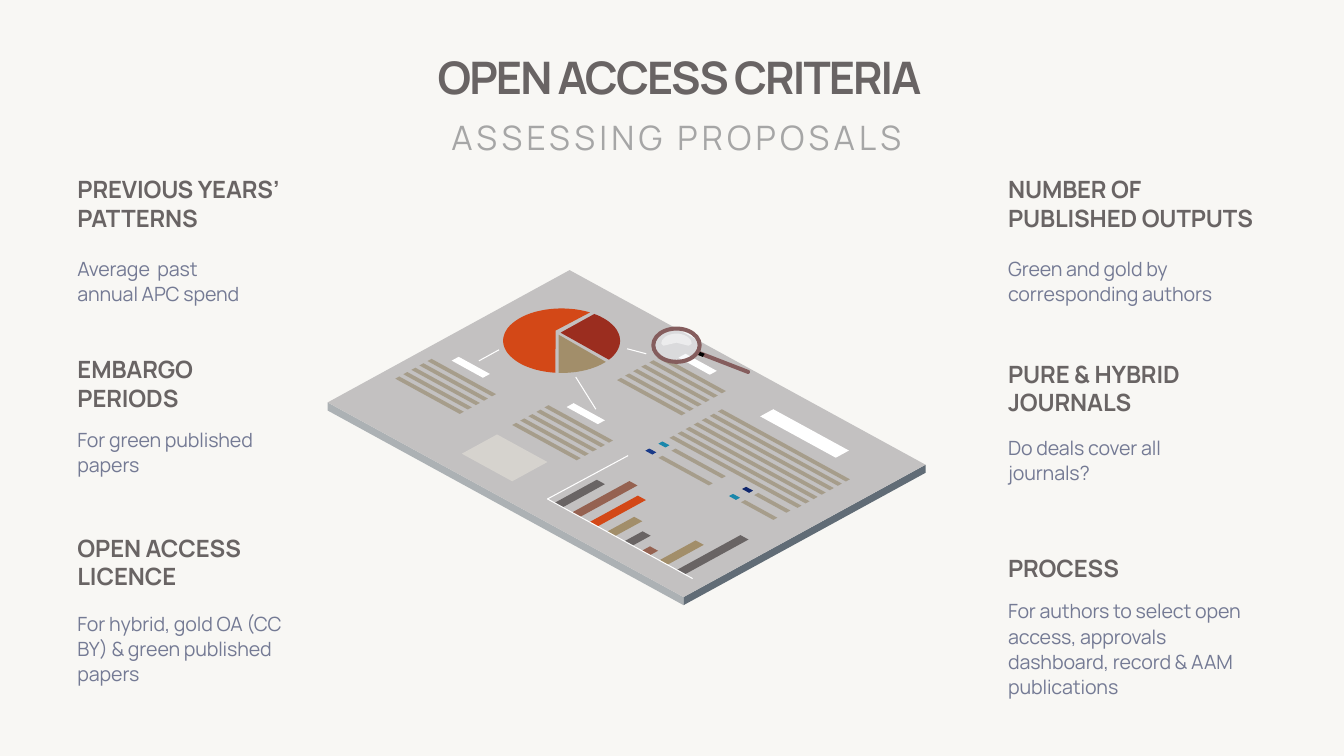
from math import cos, radians, sin

from lxml.etree import SubElement
from pptx import Presentation
from pptx.dml.color import RGBColor
from pptx.enum.shapes import MSO_CONNECTOR, MSO_SHAPE
from pptx.enum.text import MSO_ANCHOR, MSO_AUTO_SIZE, PP_ALIGN
from pptx.oxml.ns import qn
from pptx.util import Inches, Pt

BACKGROUND = RGBColor(0xF8, 0xF7, 0xF4)
CHARCOAL = RGBColor(0x69, 0x64, 0x64)
SILVER = RGBColor(0xA6, 0xA6, 0xA6)
LAVENDER = RGBColor(0x74, 0x7A, 0x94)
PAGE_GREY = RGBColor(0xC3, 0xC1, 0xC1)
SLATE = RGBColor(0x61, 0x6C, 0x76)
BEIGE = RGBColor(0xE9, 0xE5, 0xDC)
OLIVE = RGBColor(0x8B, 0x7B, 0x57)
BROWN = RGBColor(0x95, 0x62, 0x51)
ORANGE = RGBColor(0xD3, 0x48, 0x17)
TAN = RGBColor(0xA2, 0x8E, 0x6A)
RED = RGBColor(0x9B, 0x2D, 0x1F)
NAVY = RGBColor(0x19, 0x3A, 0x89)
DARK_NAVY = RGBColor(0x0F, 0x26, 0x6D)
TEAL = RGBColor(0x1A, 0x87, 0xAB)
MAUVE = RGBColor(0x85, 0x5D, 0x5D)
ICE = RGBColor(0xF2, 0xF4, 0xF8)
WHITE = RGBColor(0xFF, 0xFF, 0xFF)
BLACK = RGBColor(0, 0, 0)

TITLE_STYLE = {"size": Pt(32), "bold": True, "color": CHARCOAL, "spacing": -1.4}
SUBTITLE_STYLE = {"size": Pt(24), "bold": False, "color": SILVER, "spacing": 3}
HEADING_STYLE = {"size": Pt(17), "bold": True, "color": CHARCOAL, "spacing": -0.1}
BODY_STYLE = {"size": Pt(14), "bold": False, "color": LAVENDER, "spacing": -0.1}

# Column left, then: heading, (top, width, height), body, (top, width, height)
CRITERIA = {
    0.67: [
        ("PREVIOUS YEARS’ PATTERNS", (1.68, 2.38, 0.67),
         "Average  past annual APC spend", (2.48, 2, 0.6)),
        ("EMBARGO PERIODS", (3.47, 2.12, 0.67),
         "For green published papers", (4.18, 2, 0.6)),
        ("OPEN ACCESS LICENCE", (5.24, 2, 0.67),
         "For hybrid, gold OA (CC BY) & green published papers", (6, 2.38, 0.85)),
    ],
    9.9: [
        ("NUMBER OF PUBLISHED OUTPUTS", (1.68, 2.77, 0.67),
         "Green and gold by corresponding authors", (2.48, 2.45, 0.6)),
        ("PURE & HYBRID JOURNALS", (3.51, 2.12, 0.67),
         "Do deals cover all journals?", (4.26, 2, 0.6)),
        ("PROCESS", (5.44, 2, 0.39),
         "For authors to select open access, approvals dashboard, record & AAM publications",
         (5.88, 2.61, 1.1)),
    ],
}

# The page is seen at an angle: "along" runs down right, "across" down left.
SLOPE = 0.547
PAGE_TOP, PAGE_ALONG, PAGE_ACROSS, PAGE_DEPTH = (5.65, 2.68), 3.53, 2.4, 0.08

# Top corner, along, across
CAPTIONS = [((7.67, 4.06), 0.75, 0.13), ((5.69, 4), 0.31, 0.07),
            ((4.55, 3.54), 0.31, 0.07), ((6.8, 3.51), 0.31, 0.07)]
# Top corner of the first line, line length, number of lines, step
TEXT_BLOCKS = [((6.56, 3.53), 0.64, 6, 0.08), ((4.28, 3.56), 0.64, 5, 0.08),
               ((5.44, 4.02), 0.64, 5, 0.08), ((7.16, 4.06), 1.27, 7, 0.08),
               ((6.7, 4.45), 0.5, 2, 0.13), ((7.52, 4.89), 0.32, 2, 0.13)]
LEGEND_KEYS = [((6.44, 4.45), NAVY), ((7.27, 4.9), TEAL),
               ((6.57, 4.38), TEAL), ((7.4, 4.83), DARK_NAVY)]
BARS = [(0.42, CHARCOAL), (0.57, BROWN), (0.48, ORANGE), (0.27, TAN),
        (0.18, CHARCOAL), (0.08, BROWN), (0.36, TAN), (0.63, CHARCOAL)]
BAR_START, BAR_STEP, BAR_THICKNESS = (5.5, 4.99), 0.17, 0.08
# Tip, first and last angle, colour
PIE_SLICES = [((5.51, 3.28), 96, 299, ORANGE), ((5.56, 3.3), -56, 36, RED),
              ((5.54, 3.32), 41, 93, TAN)]
WHITE_LINES = [((6.23, 4.52), (5.43, 4.95)), ((5.43, 4.95), (6.87, 5.74)),
               ((5.71, 3.74), (5.91, 4.06)), ((4.95, 3.47), (4.75, 3.58)),
               ((6.22, 3.46), (6.41, 3.51))]


def shifted(point, along=0, across=0):
    """Move a point over the tilted page."""
    return point[0] + along - across, point[1] + (along + across) * SLOPE


def tile(top, along, across):
    """Corners of a rectangle lying on the tilted page."""
    return [top, shifted(top, along), shifted(top, along, across), shifted(top, 0, across)]


def arc(center, radius_x, radius_y, first, last, parts=40):
    angles = [radians(first + (last - first) * i / parts) for i in range(parts + 1)]
    return [(center[0] + radius_x * cos(a), center[1] + radius_y * sin(a)) for a in angles]


def paint(shape, color, opacity=100):
    shape.shadow.inherit = False
    shape.fill.solid()
    shape.fill.fore_color.rgb = color
    if opacity < 100:
        color_element = next(shape._element.spPr.iter(qn("a:srgbClr")))
        SubElement(color_element, qn("a:alpha")).set("val", str(opacity * 1000))


def add_outlines(shapes, outlines, color, opacity=100):
    """Draw closed outlines as one shape; points are in inches."""
    scaled = [[(x * 1000, y * 1000) for x, y in outline] for outline in outlines]
    builder = shapes.build_freeform(*scaled[0][0], scale=914.4)
    for number, outline in enumerate(scaled):
        if number:
            builder.move_to(*outline[0])
        builder.add_line_segments(outline[1:], close=True)
    shape = builder.convert_to_shape()
    paint(shape, color, opacity)
    shape.line.fill.background()


def add_line(shapes, start, end, color, width):
    line = shapes.add_connector(MSO_CONNECTOR.STRAIGHT, *map(Inches, start + end))
    line.line.color.rgb = color
    line.line.width = Pt(width)
    SubElement(line._element.spPr, qn("a:effectLst"))
    return line


def add_text(slide, text, box, style, anchor=MSO_ANCHOR.TOP, centered=False, line_spacing=None):
    frame = slide.shapes.add_textbox(*map(Inches, box)).text_frame
    frame.word_wrap = not centered
    frame.auto_size = MSO_AUTO_SIZE.SHAPE_TO_FIT_TEXT
    frame.vertical_anchor = anchor
    paragraph = frame.paragraphs[0]
    paragraph.alignment = PP_ALIGN.CENTER if centered else PP_ALIGN.LEFT
    paragraph.line_spacing = line_spacing
    run = paragraph.add_run()
    run.text = text
    for name, value in {"name": "Manrope", "size": style["size"], "bold": style["bold"]}.items():
        setattr(run.font, name, value)
    run.font.color.rgb = style["color"]
    run._r.get_or_add_rPr().set("spc", str(round(style["spacing"] * 100)))


def draw_page(shapes):
    top, right, bottom, left = tile(PAGE_TOP, PAGE_ALONG, PAGE_ACROSS)
    for corner, opacity in ((left, 50), (right, 100)):
        side = [corner, bottom] + [(x, y + PAGE_DEPTH) for x, y in (bottom, corner)]
        add_outlines(shapes, [side], SLATE, opacity)
    add_outlines(shapes, [[top, right, bottom, left]], PAGE_GREY)
    add_outlines(shapes, [tile(*caption) for caption in CAPTIONS], WHITE)
    add_outlines(shapes, [tile((4.93, 4.31), 0.5, 0.35)], BEIGE, 50)
    text_lines = [tile(shifted(first, 0, i * step), length, 0.04)
                  for first, length, count, step in TEXT_BLOCKS for i in range(count)]
    add_outlines(shapes, text_lines, OLIVE, 50)
    for key_top, color in LEGEND_KEYS:
        add_outlines(shapes, [tile(key_top, 0.07, 0.04)], color)


def draw_charts(shapes):
    for i, (length, color) in enumerate(BARS):
        bar_top = shifted(BAR_START, i * BAR_STEP * 1.02, -length)
        add_outlines(shapes, [tile(bar_top, BAR_THICKNESS, length)], color)
    for tip, first, last, color in PIE_SLICES:
        add_outlines(shapes, [[tip] + arc((5.57, 3.38), 0.58, 0.32, first, last)], color)
    for start, end in WHITE_LINES:
        add_line(shapes, start, end, WHITE, 0.75)


def draw_magnifier(shapes):
    handle = add_line(shapes, (6.93, 3.5), (7.42, 3.69), MAUVE, 2.9)
    handle.line._get_or_add_ln().set("cap", "rnd")
    add_outlines(shapes, [[(6.94, 3.49), (6.99, 3.51), (6.97, 3.54), (6.92, 3.52)]], BLACK)
    lens = shapes.add_shape(MSO_SHAPE.OVAL, *map(Inches, (6.48, 3.26, 0.46, 0.33)))
    paint(lens, ICE, 50)
    lens.line.color.rgb = MAUVE
    lens.line.width = Pt(2.9)
    glint = arc((6.71, 3.41), 0.15, 0.1, 180, 360) + [(6.83, 3.43), (6.71, 3.4), (6.58, 3.43)]
    add_outlines(shapes, [glint], WHITE, 50)


def main():
    presentation = Presentation()
    presentation.slide_width, presentation.slide_height = Inches(13.33), Inches(7.5)
    slide = presentation.slides.add_slide(presentation.slide_layouts[6])
    slide.background.fill.solid()
    slide.background.fill.fore_color.rgb = BACKGROUND

    add_text(slide, "OPEN ACCESS CRITERIA", (4.22, 0.44, 5.04, 0.64), TITLE_STYLE,
             MSO_ANCHOR.BOTTOM, centered=True)
    illustration = slide.shapes.add_group_shape().shapes
    for draw in (draw_page, draw_charts, draw_magnifier):
        draw(illustration)
    add_text(slide, "ASSESSING PROPOSALS", (4.37, 1.11, 4.68, 0.5), SUBTITLE_STYLE, centered=True)
    for left, criteria in CRITERIA.items():
        for heading, heading_box, body, body_box in criteria:
            add_text(slide, heading, (left, *heading_box), HEADING_STYLE, MSO_ANCHOR.BOTTOM)
            add_text(slide, body, (left, *body_box), BODY_STYLE, line_spacing=Pt(18))
    presentation.save("out.pptx")


if __name__ == "__main__":
    main()
